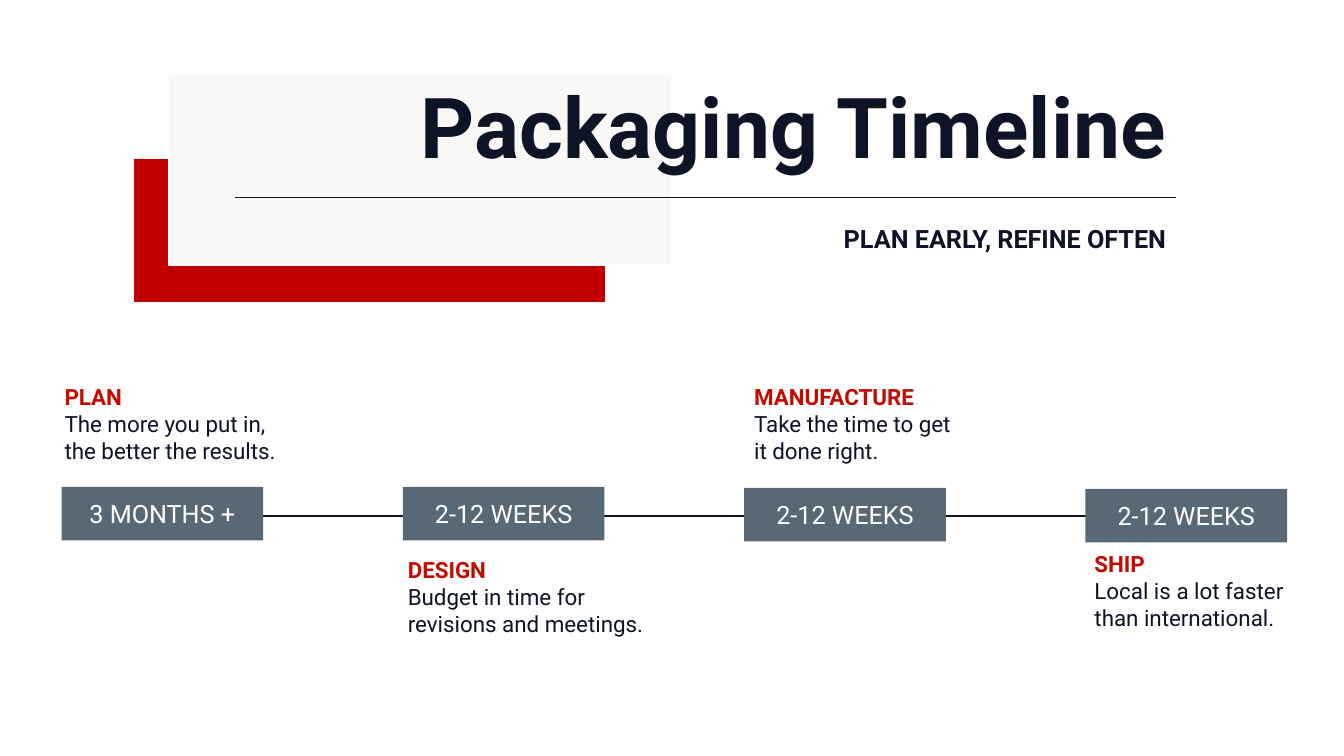
from dataclasses import dataclass

from lxml import etree
from pptx import Presentation
from pptx.dml.color import RGBColor
from pptx.enum import shapes, text
from pptx.oxml import ns
from pptx.util import Pt


@dataclass(frozen=True)
class Theme:
    font: str = "Roboto"
    ink: str = "0D1426"
    crimson: str = "C00000"
    heading: str = "C20B01"
    slate: str = "586874"
    panel: str = "F8F8F6"
    white: str = "FFFFFF"
    title: int = 60
    label: int = 18
    body: int = 16


THEME = Theme()

# duration, heading, detail, marker drop, (note left, top, width) from the marker
STAGES = [
    ("3 MONTHS +", "PLAN", "The more you put in, the better the results.",
     0, (-5, -77.8, 176.4)),
    ("2-12 WEEKS", "DESIGN", "Budget in time for revisions and meetings.",
     0, (-3.6, 46.1, 189.4)),
    ("2-12 WEEKS", "MANUFACTURE", "Take the time to get it done right.",
     0.7, (0, -78.5, 158.4)),
    ("2-12 WEEKS", "SHIP", "Local is a lot faster than international.",
     1.4, (-0.7, 40.3, 177.1)),
]


def rgb(value):
    return RGBColor.from_string(value)


def write(p, words, size, color, bold=False, align=text.PP_ALIGN.LEFT, spacing=1.0):
    p.alignment, p.line_spacing = align, spacing
    r = p.add_run()
    r.text = words
    r.font.color.rgb = rgb(color)
    formats = {"name": THEME.font, "size": Pt(size), "bold": bold}
    for name, value in formats.items():
        setattr(r.font, name, value)


def set_frame(tf, anchor):
    formats = {"word_wrap": True, "auto_size": text.MSO_AUTO_SIZE.NONE,
               "vertical_anchor": anchor}
    for name, value in formats.items():
        setattr(tf, name, value)
    return tf


def add_box(s, x, y, w, h, fill, outline=None):
    sp = s.shapes.add_shape(shapes.MSO_SHAPE.RECTANGLE, Pt(x), Pt(y), Pt(w), Pt(h))
    sp.shadow.inherit = False
    sp.fill.solid()
    sp.fill.fore_color.rgb = rgb(fill)
    if outline:
        sp.line.color.rgb = rgb(outline)
        sp.line.width = Pt(1)
    else:
        sp.line.fill.background()
    return sp


def add_rule(s, x, y, w, weight):
    line = s.shapes.add_connector(
        shapes.MSO_CONNECTOR.STRAIGHT, Pt(x), Pt(y), Pt(x + w), Pt(y))
    line.line.color.rgb = rgb(THEME.ink)
    line.line.width = Pt(weight)
    etree.SubElement(line.element.spPr, ns.qn("a:effectLst"))


def add_text(s, x, y, w, h):
    sp = s.shapes.add_textbox(Pt(x), Pt(y), Pt(w), Pt(h))
    return set_frame(sp.text_frame, text.MSO_ANCHOR.TOP)


def add_header(s, x, y, w):
    add_box(s, x - 25.2, y + 59.8, 337.7, 103, THEME.crimson, THEME.white)
    add_box(s, x, y, 360, 136.1, THEME.panel, THEME.white)

    title = s.shapes.title
    title.element.getparent().append(title.element)  # bring above the panels
    box = {"left": x, "top": y, "width": w, "height": 76.3}
    for name, value in box.items():
        setattr(title, name, Pt(value))
    right = {"bold": True, "align": text.PP_ALIGN.RIGHT, "spacing": 0.9}
    tf = set_frame(title.text_frame, text.MSO_ANCHOR.BOTTOM)
    write(tf.paragraphs[0], "Packaging Timeline", THEME.title, THEME.ink, **right)

    tf = add_text(s, x, y + 105.1, w, 28.1)
    write(tf.paragraphs[0], "PLAN EARLY, REFINE OFTEN", THEME.label, THEME.ink, **right)
    add_rule(s, x + 47.5, y + 87.8, w - 47.5, 1)


def add_stage(s, x, y, w, h, duration, heading, detail, note):
    sp = add_box(s, x, y, w, h, THEME.slate)
    tf = set_frame(sp.text_frame, text.MSO_ANCHOR.MIDDLE)
    write(tf.paragraphs[0], duration, THEME.label, THEME.white,
          align=text.PP_ALIGN.CENTER)

    dx, dy, note_w = note
    tf = add_text(s, x + dx, y + dy, note_w, 85)
    write(tf.paragraphs[0], heading, THEME.body, THEME.heading, bold=True)
    write(tf.add_paragraph(), detail, THEME.body, THEME.ink)


def add_timeline(s, x, y, w):
    marker_w, marker_h = 144, 38.2
    step = (w - marker_w) / (len(STAGES) - 1)
    add_rule(s, x, y + 20.8, w - 4, 2)
    for i, (duration, heading, detail, drop, note) in enumerate(STAGES):
        add_stage(s, x + i * step, y + drop, marker_w, marker_h,
                  duration, heading, detail, note)


def main():
    prs = Presentation()
    prs.slide_width, prs.slide_height = Pt(960), Pt(540)
    s = prs.slides.add_slide(prs.slide_layouts[5])
    s.background.fill.solid()
    s.background.fill.fore_color.rgb = rgb(THEME.white)
    add_header(s, 120.2, 53.3, 720)
    add_timeline(s, 44, 347.8, 875.4)
    prs.save("out.pptx")


if __name__ == "__main__":
    main()
